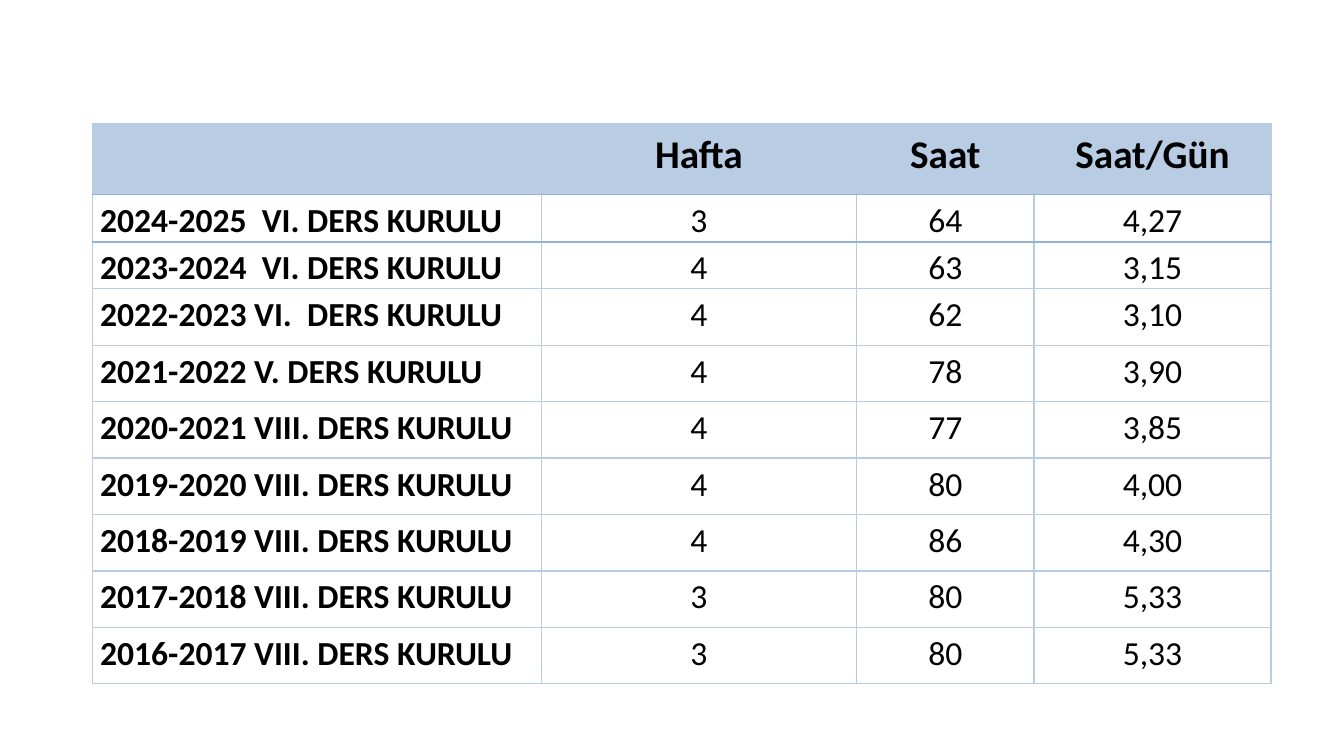
"""Build a slide comparing course committees by weeks, hours and hours per day."""
import lxml.etree
import pptx
import pptx.dml.color
import pptx.enum.text
import pptx.oxml.ns
import pptx.util

Pt = pptx.util.Pt
ALIGN = pptx.enum.text.PP_ALIGN
COLOURS = {"header": "B8CCE4", "grid": "B8CCE4", "rule": "95B3D7", "text": "000000"}
FONT = "Calibri"
COLUMN_WIDTHS = [320.4, 225.4, 126.7, 169.2]
ROW_HEIGHTS = [50.4] + [29.5] * 2 + [40.32] * 7
RULED_EDGES = (1, 2)
ROWS = [
    ("", "Hafta", "Saat", "Saat/Gün"),
    ("2024-2025  VI. DERS KURULU", "3", "64", "4,27"),
    ("2023-2024  VI. DERS KURULU", "4", "63", "3,15"),
    ("2022-2023 VI.  DERS KURULU", "4", "62", "3,10"),
    ("2021-2022 V. DERS KURULU", "4", "78", "3,90"),
    ("2020-2021 VIII. DERS KURULU", "4", "77", "3,85"),
    ("2019-2020 VIII. DERS KURULU", "4", "80", "4,00"),
    ("2018-2019 VIII. DERS KURULU", "4", "86", "4,30"),
    ("2017-2018 VIII. DERS KURULU", "3", "80", "5,33"),
    ("2016-2017 VIII. DERS KURULU", "3", "80", "5,33"),
]


def rgb(name):
    """Return the named colour."""
    return pptx.dml.color.RGBColor.from_string(COLOURS[name])


def draw_borders(cell, row):
    """Draw the grid around a cell, with heavier rules at the ruled edges."""
    qualified = pptx.oxml.ns.qn
    properties = cell._tc.get_or_add_tcPr()
    edges = {"lnL": None, "lnR": None, "lnT": row, "lnB": row + 1}
    for position, (tag, edge) in enumerate(edges.items()):
        ruled = edge in RULED_EDGES
        line = lxml.etree.Element(qualified("a:" + tag), w=str(int(Pt(1.5 if ruled else 1))))
        fill = lxml.etree.SubElement(line, qualified("a:solidFill"))
        lxml.etree.SubElement(fill, qualified("a:srgbClr"), val=COLOURS["rule" if ruled else "grid"])
        properties.insert(position, line)


def fill_cell(cell, text, row, column):
    """Write and style one cell according to its row and column."""
    header = row == 0
    cell.margin_left = cell.margin_right = Pt(5.4)
    cell.margin_top = cell.margin_bottom = Pt(0)
    if header:
        cell.fill.solid()
        cell.fill.fore_color.rgb = rgb("header")
    else:
        cell.fill.background()
    draw_borders(cell, row)
    if not text:
        return
    para = cell.text_frame.paragraphs[0]
    para.alignment = ALIGN.CENTER if header or column else ALIGN.JUSTIFY
    para.line_spacing = 1.15
    span = para.add_run()
    span.text = text
    span.font.name = FONT
    span.font.size = Pt(28 if header else 24)
    span.font.bold = header or column == 0
    span.font.color.rgb = rgb("text")


def add_committee_table(page, left, top, width, height):
    """Place the committee table in the given box."""
    frame = page.shapes.add_table(len(ROWS), len(COLUMN_WIDTHS), Pt(left), Pt(top), Pt(width), Pt(height))
    table = frame.table
    table.first_row = table.horz_banding = False
    scale = width / sum(COLUMN_WIDTHS)
    for column, column_width in zip(table.columns, COLUMN_WIDTHS):
        column.width = Pt(column_width * scale)
    for row, row_height in zip(table.rows, ROW_HEIGHTS):
        row.height = Pt(row_height)
    for row, texts in enumerate(ROWS):
        for column, text in enumerate(texts):
            fill_cell(table.cell(row, column), text, row, column)
    frame.height = Pt(height)


def main():
    """Create the deck and save it."""
    deck = pptx.Presentation()
    deck.slide_width, deck.slide_height = Pt(960), Pt(540)
    page = deck.slides.add_slide(deck.slide_layouts[6])
    add_committee_table(page, 66.2, 88.5, 841.7, 399.6)
    deck.save("out.pptx")


if __name__ == "__main__":
    main()
